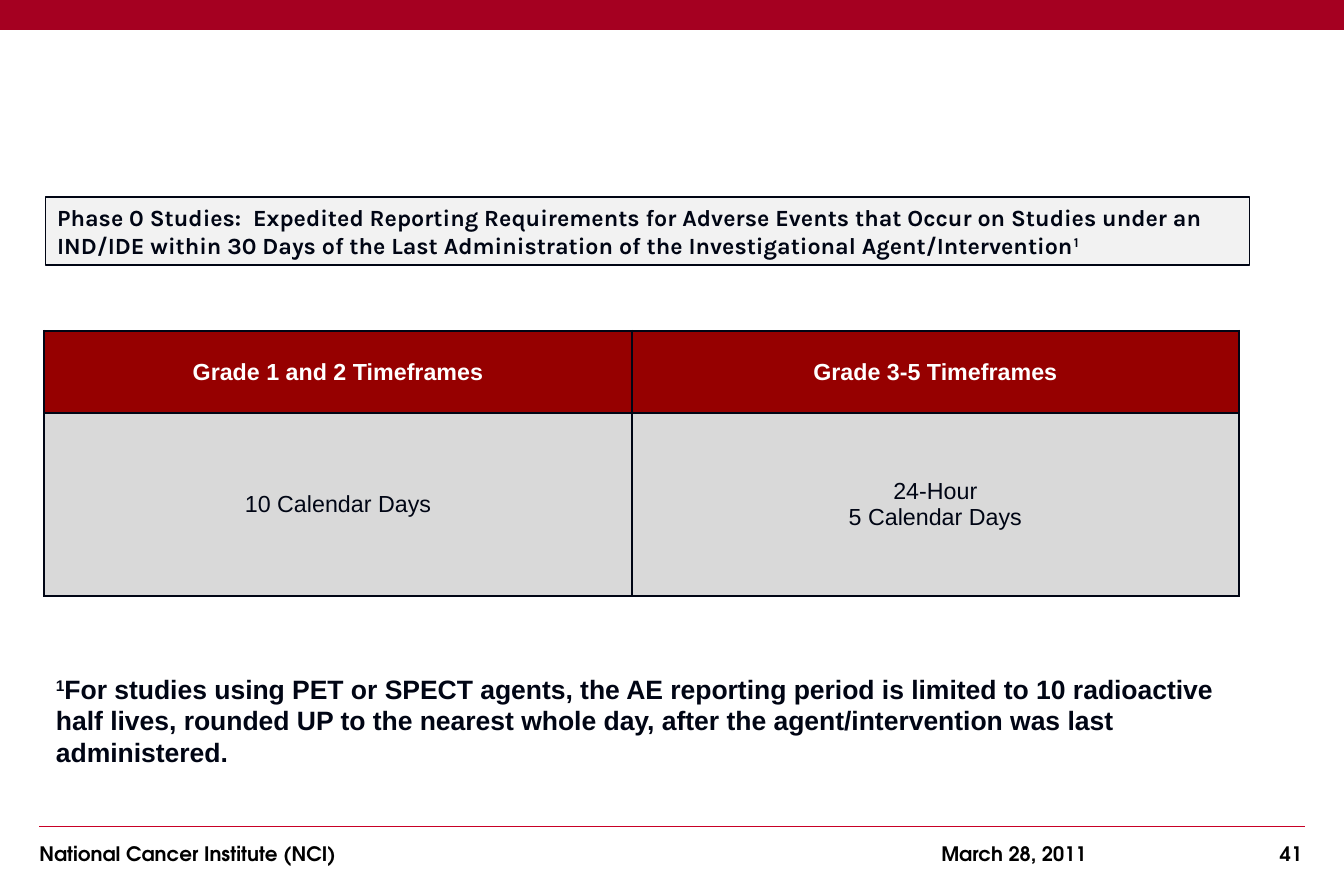
from dataclasses import dataclass

from lxml import etree
from pptx import Presentation
from pptx.dml.color import RGBColor
from pptx.enum.shapes import MSO_CONNECTOR, MSO_SHAPE
from pptx.enum.text import MSO_ANCHOR, MSO_AUTO_SIZE, PP_ALIGN
from pptx.oxml import parse_xml
from pptx.oxml.ns import nsdecls, qn
from pptx.util import Inches, Pt

RECT = MSO_SHAPE.RECTANGLE
LINE = MSO_CONNECTOR.STRAIGHT
TOP, MIDDLE = MSO_ANCHOR.TOP, MSO_ANCHOR.MIDDLE
GROW = MSO_AUTO_SIZE.SHAPE_TO_FIT_TEXT
LEFT, CENTER, RIGHT = PP_ALIGN.LEFT, PP_ALIGN.CENTER, PP_ALIGN.RIGHT
COLS, ROWS, UNIT = 45, 30, 0.25


@dataclass(frozen=True)
class Theme:
    """Colours, fonts and type sizes of the slide."""
    band: str = "A50021"
    rule: str = "C80026"
    ink: str = "000514"
    black: str = "000000"
    white: str = "FFFFFF"
    head: str = "960000"
    cell: str = "D9D9D9"
    panel: str = "F2F2F2"
    body: str = "Arial"
    title: str = "Karla"
    footer: str = "TeX Gyre Adventor"
    small: int = 12
    medium: int = 14
    large: int = 16
    thin: float = 1
    thick: float = 1.5


def grid(*units):
    """Turn grid units into lengths."""
    return [Inches(n * UNIT) for n in units]


class Page:
    """Draws elements on the current slide in one style."""

    def __init__(self, slide, theme):
        """Keep the slide and its theme."""
        self.slide, self.theme = slide, theme

    def letter(self, frame, lines, font, size, color, bold=True, align=LEFT):
        """Fill a frame with lines made of (text, raised) runs."""
        frame.word_wrap = True
        for i, line in enumerate(lines):
            para = frame.add_paragraph() if i else frame.paragraphs[0]
            para.alignment = align
            for text, raised in line:
                run = para.add_run()
                run.text = text
                run.font.name, run.font.size = font, Pt(size)
                run.font.bold = bold
                run.font.color.rgb = RGBColor.from_string(color)
                if raised:
                    run.font._element.set("baseline", "30000")

    def box(self, at, fill, edge=None):
        """Add a plain rectangle and return it."""
        shape = self.slide.shapes.add_shape(RECT, *grid(*at))
        shape.shadow.inherit = False
        shape.fill.solid()
        shape.fill.fore_color.rgb = RGBColor.from_string(fill)
        if edge:
            shape.line.color.rgb = RGBColor.from_string(edge)
            shape.line.width = Pt(self.theme.thin)
        else:
            shape.line.fill.background()
        return shape

    def panel(self, at, lines):
        """Add the framed heading."""
        t = self.theme
        frame = self.box(at, t.panel, t.ink).text_frame
        frame.vertical_anchor = TOP
        self.letter(frame, lines, t.title, t.medium, t.ink)
        frame.auto_size = GROW

    def text(self, at, lines, font, size, color, align=LEFT, sides=(0.1, 0.1)):
        """Add a text box with the given side insets in inches."""
        frame = self.slide.shapes.add_textbox(*grid(*at)).text_frame
        frame.margin_left, frame.margin_right = map(Inches, sides)
        self.letter(frame, lines, font, size, color, align=align)
        frame.auto_size = GROW

    def rule(self, left, right, row):
        """Add a horizontal line."""
        line = self.slide.shapes.add_connector(LINE, *grid(left, row, right, row))
        line.line.color.rgb = RGBColor.from_string(self.theme.rule)
        line.line.width = Pt(self.theme.thin)
        etree.SubElement(line._element.spPr, qn("a:effectLst"))

    def border(self, cell, base):
        """Edge a cell, with its own width at the base."""
        t = self.theme
        for side in "LRTB":
            width = Pt(base if side == "B" else t.thick)
            cell._tc.get_or_add_tcPr().append(parse_xml(
                f'<a:ln{side} {nsdecls("a")} w="{width}"><a:solidFill>'
                f'<a:srgbClr val="{t.ink}"/></a:solidFill></a:ln{side}>'))

    def table(self, left, top, widths, heights, data):
        """Add a table with a dark head row and grey cells."""
        t = self.theme
        table = self.slide.shapes.add_table(
            len(heights), len(widths),
            *grid(left, top, sum(widths), sum(heights))).table
        table.horz_banding = table.first_row = False
        for col, width in zip(table.columns, grid(*widths)):
            col.width = width
        for i, (row, height) in enumerate(zip(table.rows, grid(*heights))):
            row.height = height
            head = i == 0
            for cell, lines in zip(row.cells, data[i]):
                self.border(cell, t.thick if head else t.thin)
                cell.fill.solid()
                cell.fill.fore_color.rgb = RGBColor.from_string(
                    t.head if head else t.cell)
                cell.vertical_anchor = MIDDLE
                self.letter(cell.text_frame, [[(s, False)] for s in lines],
                            t.body, t.medium, t.white if head else t.ink,
                            head, CENTER)


def main():
    """Build the slide and save it."""
    deck = Presentation()
    deck.slide_width, deck.slide_height = grid(COLS, ROWS)
    theme = Theme()
    page = Page(deck.slides.add_slide(deck.slide_layouts[6]), theme)
    page.box((0, 0, COLS, 1), theme.band)
    page.rule(1.32, 43.68, 27.68)
    for left, width, text, align, sides in (
            (1.32, 16, "National Cancer Institute (NCI)", LEFT, (0, 0.1)),
            (31.52, 6, "March 28, 2011", LEFT, (0, 0.1)),
            (40, 3.6, "41", RIGHT, (0.1, 0))):
        page.text((left, 28, width, 1.2), [[(text, False)]], theme.footer,
                  theme.small, theme.black, align, sides)
    page.table(1.48, 11.08, (19.68, 20.32), (2.76, 6.12), (
        (["Grade 1 and 2 Timeframes"], ["Grade 3-5 Timeframes"]),
        (["10 Calendar Days"], ["24-Hour", "5 Calendar Days"])))
    page.panel((1.52, 6.6, 40.32, 2.28), [[
        ("Phase 0 Studies:  Expedited Reporting Requirements for Adverse "
         "Events that Occur on Studies under an IND/IDE within 30 Days of the "
         "Last Administration of the Investigational Agent/Intervention", False),
        ("1", True)]])
    page.text((1.48, 22.32, 41, 3.64), [[
        ("1", True),
        ("For studies using PET or SPECT agents, the AE reporting period is "
         "limited to 10 radioactive half lives, rounded UP to the nearest "
         "whole day, after the agent/intervention was last administered.",
         False)]], theme.body, theme.large, theme.ink)
    deck.save("out.pptx")


if __name__ == "__main__":
    main()
